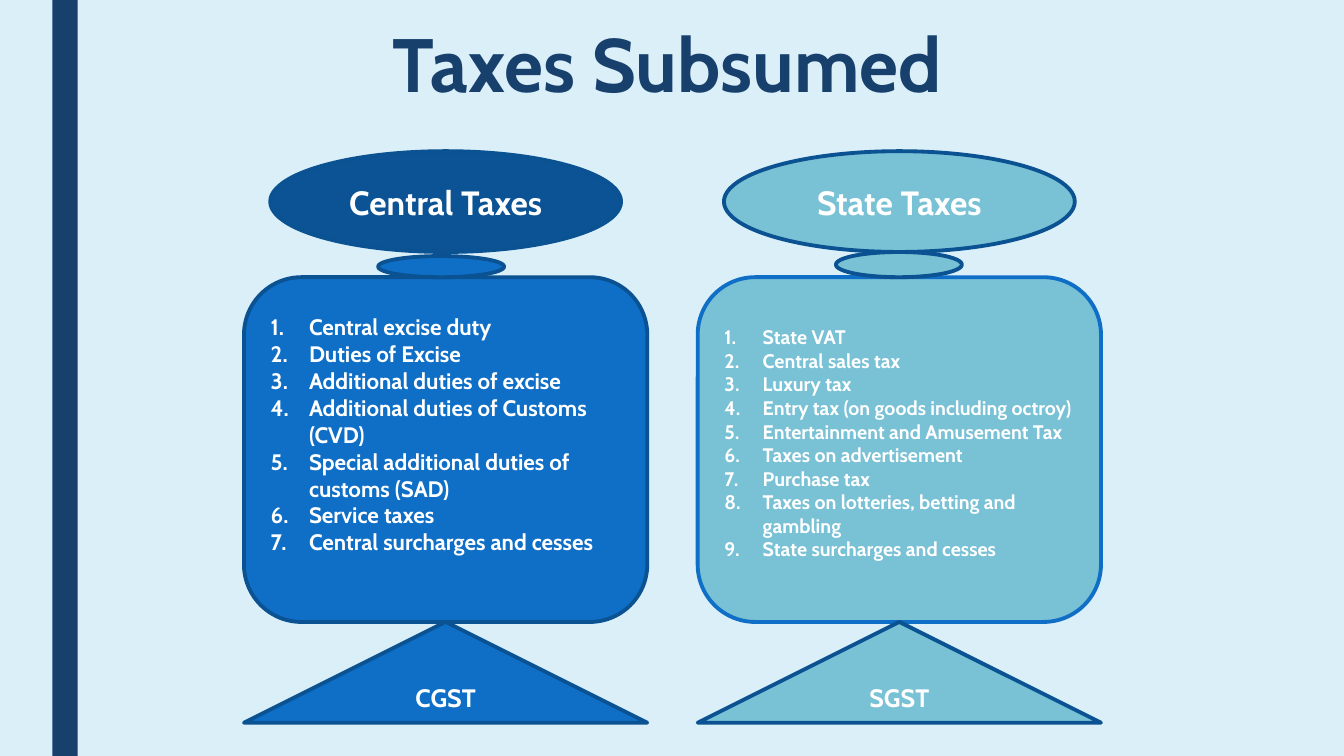
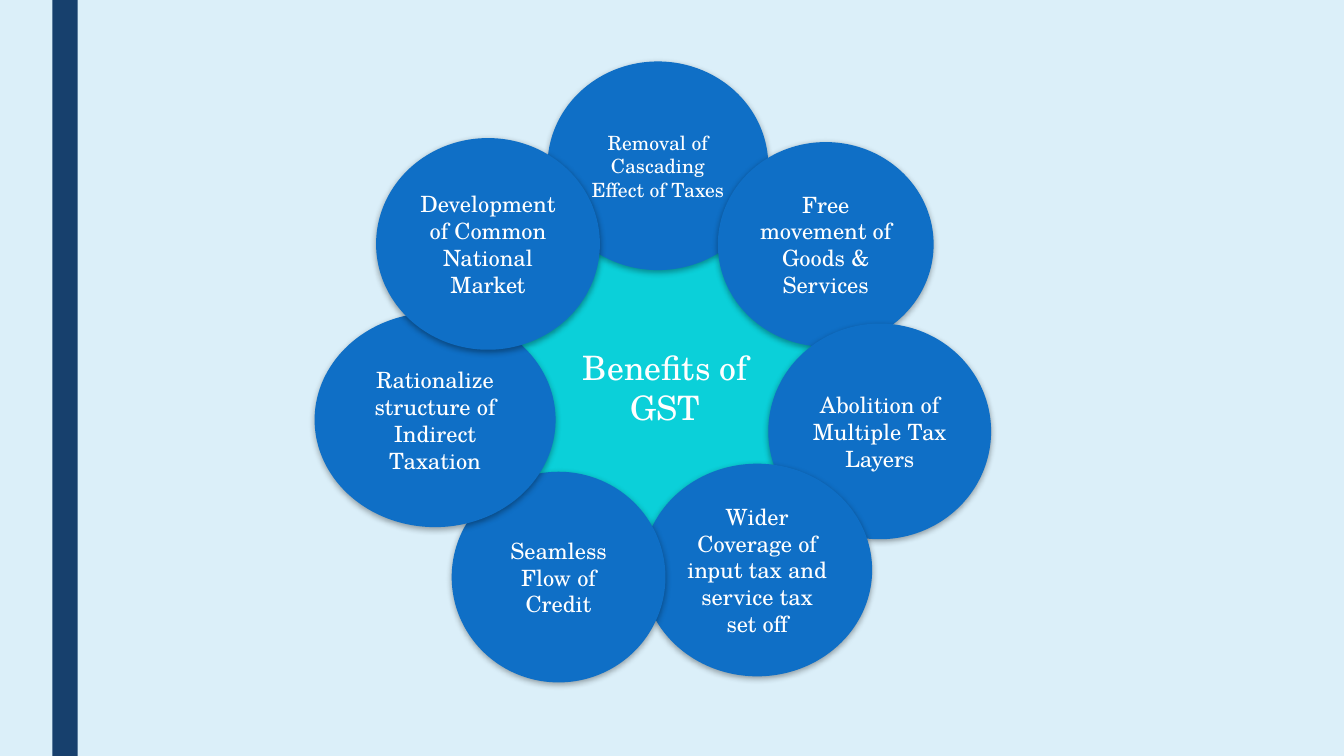
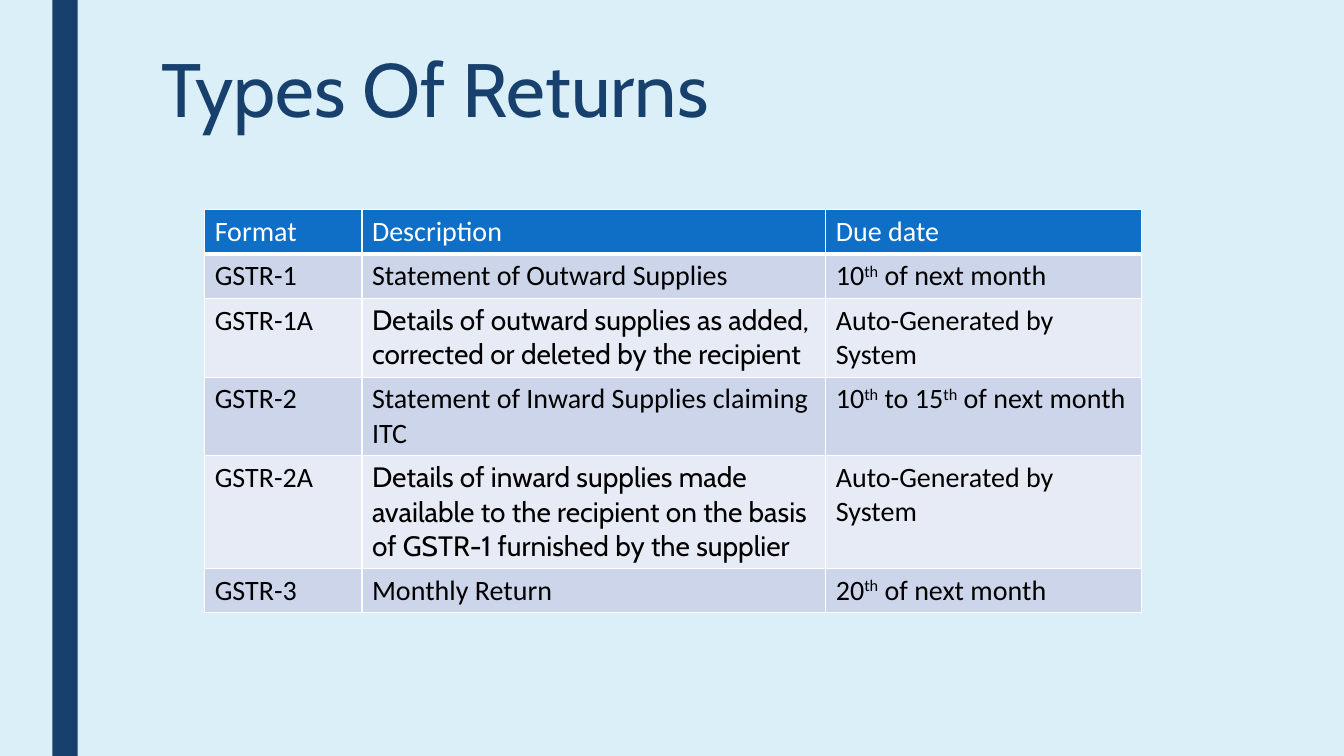
from lxml import etree
from pptx import Presentation
from pptx.dml.color import RGBColor
from pptx.enum import shapes, text
from pptx.oxml import ns
from pptx.util import Inches, Pt

COLOURS = {
    "background": "DBEFF9", "navy": "17406D", "blue": "0F6FC6",
    "dark_blue": "0B5394", "outline": "0B5292", "teal": "79C1D5",
    "turquoise": "0BD0D9", "white": "FFFFFF", "black": "000000",
    "odd_row": "CCD5EA", "even_row": "E7EBF5",
}
SANS, SERIF, TABLE_FONT = "Cabin", "TeX Gyre Schola", "Calibri"
TITLE_ONLY, BLANK = 5, 6
CENTRE = text.PP_ALIGN.CENTER
SHAPE = shapes.MSO_SHAPE

COLUMN_WIDTH, BODY_TOP, BODY_HEIGHT = 4, 2.75, 3.42
HEAD_WIDTH, NECK_WIDTH = 3.48, 1.25

CENTRAL_TAXES = [
    "Central excise duty", "Duties of Excise", "Additional duties of excise",
    "Additional duties of Customs (CVD)",
    "Special additional duties of customs (SAD)",
    "Service taxes", "Central surcharges and cesses",
]
STATE_TAXES = [
    "State VAT", "Central sales tax", "Luxury tax",
    "Entry tax (on goods including octroy)",
    "Entertainment and Amusement Tax", "Taxes on advertisement",
    "Purchase tax", "Taxes on lotteries, betting and gambling",
    "State surcharges and cesses",
]
# Left, top, width, height, text size, wording
BENEFITS = [
    (5.43, 0.61, 2.19, 2.07, 14, "Removal of Cascading Effect of Taxes"),
    (7.12, 1.41, 2.14, 2.03, 16, "Free movement of Goods & Services"),
    (7.62, 3.21, 2.21, 2.14, 16, "Abolition of Multiple Tax Layers"),
    (6.37, 4.6, 2.28, 2.11, 16,
     "Wider Coverage of input tax and service tax set off"),
    (4.48, 4.68, 2.12, 2.09, 16, "Seamless Flow of Credit"),
    (3.12, 3.1, 2.39, 2.13, 16, "Rationalize structure of Indirect Taxation"),
    (3.73, 1.37, 2.22, 2.1, 16, "Development of Common National Market"),
]
# Text between ^ marks is raised
RETURNS = [
    ("Format", "Description", "Due date"),
    ("GSTR-1", "Statement of Outward Supplies", "10^th^ of next month"),
    ("GSTR-1A",
     "Details of outward supplies as added, corrected or deleted by the recipient",
     "Auto-Generated by System"),
    ("GSTR-2", "Statement of Inward Supplies claiming ITC",
     "10^th^ to 15^th^ of next month"),
    ("GSTR-2A",
     "Details of inward supplies made available to the recipient on the basis "
     "of GSTR-1 furnished by the supplier",
     "Auto-Generated by System"),
    ("GSTR-3", "Monthly Return", "20^th^ of next month"),
]


def rgb(name):
    return RGBColor.from_string(COLOURS[name])


def add_xml(parent, tag, **attributes):
    return etree.SubElement(parent, ns.qn(tag), attributes)


def format_runs(paragraph, size, font, colour="white", bold=False):
    for run in paragraph.runs:
        run.font.size = Pt(size)
        run.font.name = font
        run.font.bold = bold
        run.font.color.rgb = rgb(colour)


def place(shape, left, top, width, height):
    shape.left, shape.top = Inches(left), Inches(top)
    shape.width, shape.height = Inches(width), Inches(height)


def add_figure(slide, kind, box, fill, outline=None):
    shape = slide.shapes.add_shape(kind, *map(Inches, box))
    shape.shadow.inherit = False
    shape.fill.solid()
    shape.fill.fore_color.rgb = rgb(fill)
    if outline:
        shape.line.color.rgb = rgb(outline)
        shape.line.width = Pt(2.75)
    else:
        shape.line.fill.background()
    return shape


def write_label(shape, wording, size, font, bold=False):
    frame = shape.text_frame
    frame.word_wrap = True
    frame.vertical_anchor = text.MSO_ANCHOR.MIDDLE
    frame.text = wording
    frame.paragraphs[0].alignment = CENTRE
    format_runs(frame.paragraphs[0], size, font, bold=bold)


def write_numbered_list(shape, items, size, bottom_inset):
    frame = shape.text_frame
    frame.word_wrap = True
    frame.vertical_anchor = text.MSO_ANCHOR.MIDDLE
    frame.margin_bottom = Inches(bottom_inset)
    frame.text = "\n".join(items)
    for paragraph in frame.paragraphs:
        paragraph.alignment = text.PP_ALIGN.LEFT
        format_runs(paragraph, size, SANS, bold=True)
        properties = paragraph._p.get_or_add_pPr()
        properties.set("marL", str(Inches(0.38)))
        properties.set("indent", str(Inches(-0.38)))
        add_xml(properties, "a:buFont", typeface="+mj-lt")
        add_xml(properties, "a:buAutoNum", type="arabicPeriod")


def add_soft_shadow(shape):
    effects = shape.element.spPr.find(ns.qn("a:effectLst"))
    shadow = add_xml(effects, "a:outerShdw", blurRad=str(Pt(4.5)),
                     dist=str(Pt(1.5)), dir="5400000", algn="ctr",
                     rotWithShape="0")
    colour = add_xml(shadow, "a:srgbClr", val=COLOURS["black"])
    add_xml(colour, "a:alpha", val="35000")


def write_title(slide, wording, left, top, alignment, bold=False):
    title = slide.shapes.title
    place(title, left, top, 10.5, 1.62)
    frame = title.text_frame
    frame.text = wording
    frame.auto_size = text.MSO_AUTO_SIZE.NONE
    frame.vertical_anchor = text.MSO_ANCHOR.TOP
    paragraph = frame.paragraphs[0]
    paragraph.alignment = alignment
    paragraph.line_spacing = 0.89
    format_runs(paragraph, 54, SANS, "navy", bold)


def style_master(presentation, slide):
    """Give the master its background and side band, drawn first on a slide."""
    master = presentation.slide_master
    master.background.fill.solid()
    master.background.fill.fore_color.rgb = rgb("background")
    band = add_figure(slide, SHAPE.RECTANGLE, (0.52, 0, 0.25, 7.5), "navy")
    master.shapes.element.insert(2, band.element)


def add_tax_column(slide, left, head, items, base, size, bottom_inset,
                   fill, head_fill, body_outline, neck_left, neck_height):
    """Stack a head, neck, numbered body and triangular base."""
    head_left = left + (COLUMN_WIDTH - HEAD_WIDTH) / 2
    ellipse = add_figure(slide, SHAPE.OVAL, (head_left, 1.5, HEAD_WIDTH, 1),
                         head_fill, "outline")
    write_label(ellipse, head, 24, SANS, bold=True)
    body = add_figure(slide, SHAPE.ROUNDED_RECTANGLE,
                      (left, BODY_TOP, COLUMN_WIDTH, BODY_HEIGHT),
                      fill, body_outline)
    write_numbered_list(body, items, size, bottom_inset)
    triangle = add_figure(slide, SHAPE.ISOSCELES_TRIANGLE,
                          (left, BODY_TOP + BODY_HEIGHT, COLUMN_WIDTH, 1),
                          fill, "outline")
    write_label(triangle, base, 18, SANS, bold=True)
    add_figure(slide, SHAPE.FLOWCHART_CONNECTOR,
               (neck_left, BODY_TOP - neck_height, NECK_WIDTH, neck_height),
               fill, "outline")


def add_benefit_circle(slide, box, fill, wording, size):
    circle = add_figure(slide, SHAPE.OVAL, box, fill)
    add_soft_shadow(circle)
    write_label(circle, wording, size, SERIF)


def set_borders(cell, bottom_width):
    properties = cell._tc.get_or_add_tcPr()
    widths = {"a:lnL": 1, "a:lnR": 1, "a:lnT": 1, "a:lnB": bottom_width}
    for index, (tag, width) in enumerate(widths.items()):
        line = add_xml(properties, tag, w=str(Pt(width)))
        add_xml(add_xml(line, "a:solidFill"), "a:srgbClr", val=COLOURS["white"])
        properties.insert(index, line)


def write_cell(cell, wording, fill, font, colour):
    cell.fill.solid()
    cell.fill.fore_color.rgb = rgb(fill)
    paragraph = cell.text_frame.paragraphs[0]
    for index, part in enumerate(wording.split("^")):
        run = paragraph.add_run()
        run.text = part
        if index % 2:
            run._r.get_or_add_rPr().set("baseline", "30000")
    format_runs(paragraph, 20, font, colour)


def add_returns_table(slide):
    widths, row_height = (1.56, 4.6, 3.13), 0.41
    frame = slide.shapes.add_table(
        len(RETURNS), len(widths), Inches(2.03), Inches(2.08),
        Inches(sum(widths)), Inches(row_height * len(RETURNS)))
    table = frame.table
    for column, width in zip(table.columns, widths):
        column.width = Inches(width)
    for row_index, row in enumerate(RETURNS):
        table.rows[row_index].height = Inches(row_height)
        header = row_index == 0
        fill = "blue" if header else "odd_row" if row_index % 2 else "even_row"
        for column_index, wording in enumerate(row):
            cell = table.cell(row_index, column_index)
            details = wording.startswith("Details")
            write_cell(cell, wording, fill, SANS if details else TABLE_FONT,
                       "white" if header else "black")
            set_borders(cell, 3 if header else 1)


def build_taxes_slide(slide):
    add_tax_column(slide, 2.42, "Central Taxes", CENTRAL_TAXES, "CGST",
                   size=16, bottom_inset=0.35, fill="blue",
                   head_fill="dark_blue", body_outline="outline",
                   neck_left=3.75, neck_height=0.21)
    add_tax_column(slide, 6.92, "State Taxes", STATE_TAXES, "SGST",
                   size=14, bottom_inset=0.18, fill="teal",
                   head_fill="teal", body_outline="blue",
                   neck_left=8.29, neck_height=0.25)
    write_title(slide, "Taxes Subsumed", 1.37, 0.23, CENTRE, bold=True)


def build_benefits_slide(slide):
    add_benefit_circle(slide, (4.86, 2.1, 3.48, 3.48), "turquoise",
                       "Benefits of GST", 24)
    for *box, size, wording in BENEFITS:
        add_benefit_circle(slide, box, "blue", wording, size)


def build_returns_slide(slide):
    add_returns_table(slide)
    write_title(slide, "Types Of Returns", 1.5, 0.47, text.PP_ALIGN.LEFT)


def main():
    presentation = Presentation()
    presentation.slide_width = Inches(13.33)
    presentation.slide_height = Inches(7.5)
    taxes, benefits, returns = (
        presentation.slides.add_slide(presentation.slide_layouts[layout])
        for layout in (TITLE_ONLY, BLANK, TITLE_ONLY))
    style_master(presentation, taxes)
    build_taxes_slide(taxes)
    build_benefits_slide(benefits)
    build_returns_slide(returns)
    presentation.save("out.pptx")


if __name__ == "__main__":
    main()
